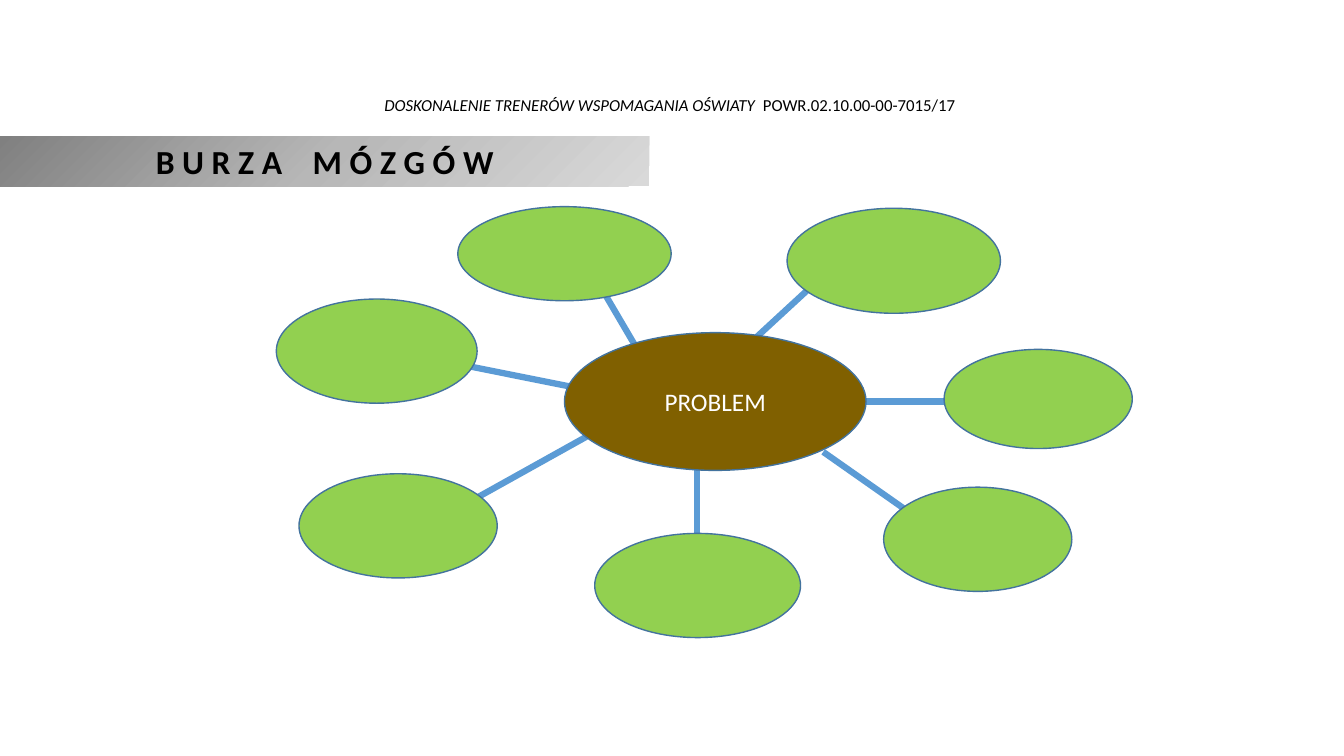
from lxml.etree import SubElement
from pptx import Presentation
from pptx.dml.color import RGBColor
from pptx.enum.shapes import MSO_CONNECTOR, MSO_SHAPE
from pptx.enum.text import MSO_ANCHOR, MSO_AUTO_SIZE, PP_ALIGN
from pptx.oxml import parse_xml
from pptx.oxml.ns import nsdecls, qn
from pptx.util import Inches, Pt

COLUMNS, ROWS = 160, 90
WIDTH, HEIGHT = Inches(13.33), Inches(7.5)

TITLE = [("B U R Z A", {}), (" ", {"gap": 16.3}), ("M Ó Z G Ó W", {})]
TITLE_BOX = (0, 16.2, 77.3, 6)
HEADER = [
    ("DOSKONALENIE TRENERÓW WSPOMAGANIA OŚWIATY", {"italic": True}),
    (" ", {"gap": 2.7}),
    ("POWR.02.10.00-00-7015/17", {}),
]
HEADER_BOX = (11, 10.8, 137.5, 3.4)
PROBLEM = [("PROBLEM", {})]
PROBLEM_BOX = (67.2, 39.6, 35.9, 16.4)
IDEAS = [
    {"box": (54.5, 24.6, 25.4, 11.2), "link": (76, 41.8, 71.3, 33.8)},
    {"box": (93.7, 24.8, 25.4, 12.5), "link": (88.8, 41.3, 97.8, 33)},
    {"box": (112.4, 41.6, 22.4, 11.8), "link": (103.1, 47.8, 116.5, 47.8)},
    {"box": (105.2, 58, 22.4, 12.4), "link": (98, 53.8, 111.4, 63.2)},
    {"box": (70.8, 63.5, 24.5, 12.4), "link": (83, 56, 83, 65.6)},
    {"box": (35.6, 56.4, 23.6, 12.4), "link": (69.8, 52, 54, 60.8)},
    {"box": (32.9, 35.6, 23.9, 12.4), "link": (68.8, 46.2, 52.8, 43)},
]
BANNER_STOPS = [(0, "808080"), (50, "B7B7B7"), (100, "D9D9D9")]
LINK, IDEA, HUB, OUTLINE = "5B9BD5", "92D050", "806000", "43739E"
BLACK, WHITE = "000000", "FFFFFF"


def color(value):
    return RGBColor.from_string(value)


def place(box):
    units = (WIDTH / COLUMNS, HEIGHT / ROWS) * 2
    return [round(length * unit) for length, unit in zip(box, units)]


def write(shape, runs, size, text_color, bold=False):
    frame = shape.text_frame
    settings = {
        "word_wrap": True,
        "auto_size": MSO_AUTO_SIZE.NONE,
        "vertical_anchor": MSO_ANCHOR.MIDDLE,
        "margin_top": 0,
        "margin_bottom": 0,
    }
    for name, value in settings.items():
        setattr(frame, name, value)
    paragraph = frame.paragraphs[0]
    paragraph.alignment = PP_ALIGN.CENTER
    for text, style in runs:
        run = paragraph.add_run()
        run.text = text
        font_format = {
            "name": "Calibri",
            "size": Pt(size),
            "bold": bold,
            "italic": style.get("italic", False),
        }
        for name, value in font_format.items():
            setattr(run.font, name, value)
        run.font.color.rgb = color(text_color)
        if "gap" in style:
            run.font._element.set("spc", str(round(style["gap"] * 100)))


def add_link(slide, ends):
    link = slide.shapes.add_connector(MSO_CONNECTOR.STRAIGHT, *place(ends))
    link.line.color.rgb = color(LINK)
    link.line.width = Pt(4.5)
    SubElement(link._element.spPr, qn("a:effectLst"))


def add_ellipse(slide, box, fill_color):
    ellipse = slide.shapes.add_shape(MSO_SHAPE.OVAL, *place(box))
    ellipse.shadow.inherit = False
    ellipse.fill.solid()
    ellipse.fill.fore_color.rgb = color(fill_color)
    ellipse.line.color.rgb = color(OUTLINE)
    ellipse.line.width = Pt(1)
    return ellipse


def add_banner(slide):
    banner = slide.shapes.title
    for name, value in zip(("left", "top", "width", "height"), place(TITLE_BOX)):
        setattr(banner, name, value)
    stops = "".join(
        f'<a:gs pos="{position * 1000}"><a:srgbClr val="{value}"/></a:gs>'
        for position, value in BANNER_STOPS
    )
    banner._element.spPr.append(parse_xml(
        f'<a:gradFill {nsdecls("a")} rotWithShape="1"><a:gsLst>{stops}</a:gsLst>'
        '<a:path path="circle"><a:fillToRect r="100000" b="100000"/></a:path>'
        '</a:gradFill>'
    ))
    write(banner, TITLE, 24, BLACK, bold=True)


def main():
    presentation = Presentation()
    presentation.slide_width, presentation.slide_height = WIDTH, HEIGHT
    slide = presentation.slides.add_slide(presentation.slide_layouts[5])
    write(slide.shapes.add_textbox(*place(HEADER_BOX)), HEADER, 12, BLACK)
    for idea in IDEAS:
        add_link(slide, idea["link"])
    for idea in IDEAS:
        add_ellipse(slide, idea["box"], IDEA)
    write(add_ellipse(slide, PROBLEM_BOX, HUB), PROBLEM, 18, WHITE)
    add_banner(slide)
    presentation.save("out.pptx")


if __name__ == "__main__":
    main()
